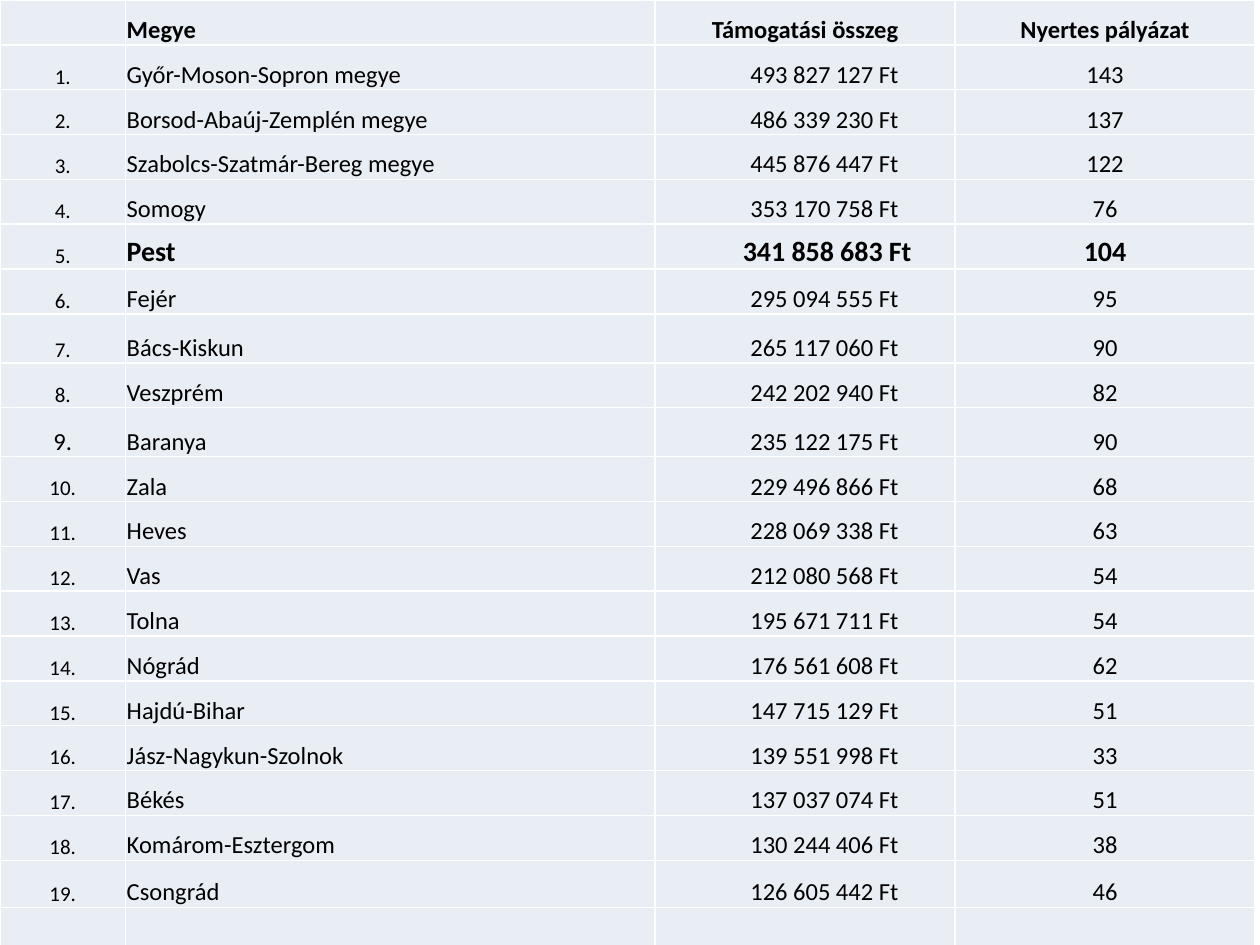
from lxml import etree
from pptx import Presentation
from pptx.dml.color import RGBColor
from pptx.enum.text import MSO_ANCHOR, PP_ALIGN
from pptx.oxml.ns import qn
from pptx.util import Pt

LEFT, CENTER = PP_ALIGN.LEFT, PP_ALIGN.CENTER
BOTTOM = MSO_ANCHOR.BOTTOM

HEADINGS = ("", "Megye", "Támogatási összeg", "Nyertes pályázat")
COUNTIES = [
    ("Győr-Moson-Sopron megye", "493 827 127 Ft", 143),
    ("Borsod-Abaúj-Zemplén megye", "486 339 230 Ft", 137),
    ("Szabolcs-Szatmár-Bereg megye", "445 876 447 Ft", 122),
    ("Somogy", "353 170 758 Ft", 76),
    ("Pest", "341 858 683 Ft", 104),
    ("Fejér", "295 094 555 Ft", 95),
    ("Bács-Kiskun", "265 117 060 Ft", 90),
    ("Veszprém", "242 202 940 Ft", 82),
    ("Baranya", "235 122 175 Ft", 90),
    ("Zala", "229 496 866 Ft", 68),
    ("Heves", "228 069 338 Ft", 63),
    ("Vas", "212 080 568 Ft", 54),
    ("Tolna", "195 671 711 Ft", 54),
    ("Nógrád", "176 561 608 Ft", 62),
    ("Hajdú-Bihar", "147 715 129 Ft", 51),
    ("Jász-Nagykun-Szolnok", "139 551 998 Ft", 33),
    ("Békés", "137 037 074 Ft", 51),
    ("Komárom-Esztergom", "130 244 406 Ft", 38),
    ("Csongrád", "126 605 442 Ft", 46),
]
HIGHLIGHTED = "Pest"
LARGE_RANK = "9."

COLUMN_WIDTHS = (71.7, 302.7, 171.4, 171.4)
ROW_HEIGHT = 25.63
TALLER_ROWS = {7: 28, 9: 28, 19: 26.9}
ALIGNMENTS = (CENTER, LEFT, CENTER, CENTER)
RANK, COUNTY, AMOUNT, WINNERS = range(4)
INSET = 0.75
AMOUNT_INDENT_PER_SIZE = 1.58


def color(value):
    return RGBColor.from_string(value)


def add_borders(cell, value, width):
    properties = cell._tc.get_or_add_tcPr()
    for position, side in enumerate(("lnL", "lnR", "lnT", "lnB")):
        line = etree.Element(qn(f"a:{side}"), w=str(Pt(width)))
        fill = etree.SubElement(line, qn("a:solidFill"))
        etree.SubElement(fill, qn("a:srgbClr"), val=value)
        properties.insert(position, line)


def fill_cell(cell, text, column, size, bold, indent):
    cell.fill.solid()
    cell.fill.fore_color.rgb = color("E9EDF4")
    add_borders(cell, "FFFFFF", 1)
    cell.vertical_anchor = BOTTOM
    cell.margin_left = Pt(INSET + indent)
    cell.margin_right = cell.margin_top = Pt(INSET)
    cell.margin_bottom = 0
    if not text:
        return
    cell.text_frame.text = text
    paragraph = cell.text_frame.paragraphs[0]
    paragraph.alignment = ALIGNMENTS[column]
    font = paragraph.runs[0].font
    font.name = "Calibri"
    font.size = Pt(size)
    font.bold = bold
    font.color.rgb = color("000000")


def main():
    presentation = Presentation()
    presentation.slide_width, presentation.slide_height = Pt(720), Pt(540)
    slide = presentation.slides.add_slide(presentation.slide_layouts[6])

    ranking = [
        (f"{rank}.", county, amount, str(winners))
        for rank, (county, amount, winners) in enumerate(COUNTIES, 1)
    ]
    rows = [HEADINGS, *ranking, ("",) * len(HEADINGS)]
    heights = [TALLER_ROWS.get(i, ROW_HEIGHT) for i in range(len(rows))]
    table = slide.shapes.add_table(
        len(rows), len(HEADINGS), 0, 0, Pt(sum(COLUMN_WIDTHS)), Pt(sum(heights))
    ).table
    table.first_row = table.horz_banding = False
    for column, width in zip(table.columns, COLUMN_WIDTHS):
        column.width = Pt(width)

    for r, (values, height) in enumerate(zip(rows, heights)):
        table.rows[r].height = Pt(height)
        highlighted = values[COUNTY] == HIGHLIGHTED
        for c, text in enumerate(values):
            if c == RANK:
                size = 14 if text == LARGE_RANK else 12
            else:
                size = 16 if highlighted else 14
            bold = r == 0 or (highlighted and c != RANK)
            indent = size * AMOUNT_INDENT_PER_SIZE if c == AMOUNT and r else 0
            fill_cell(table.cell(r, c), text, c, size, bold, indent)

    presentation.save("out.pptx")


if __name__ == "__main__":
    main()
